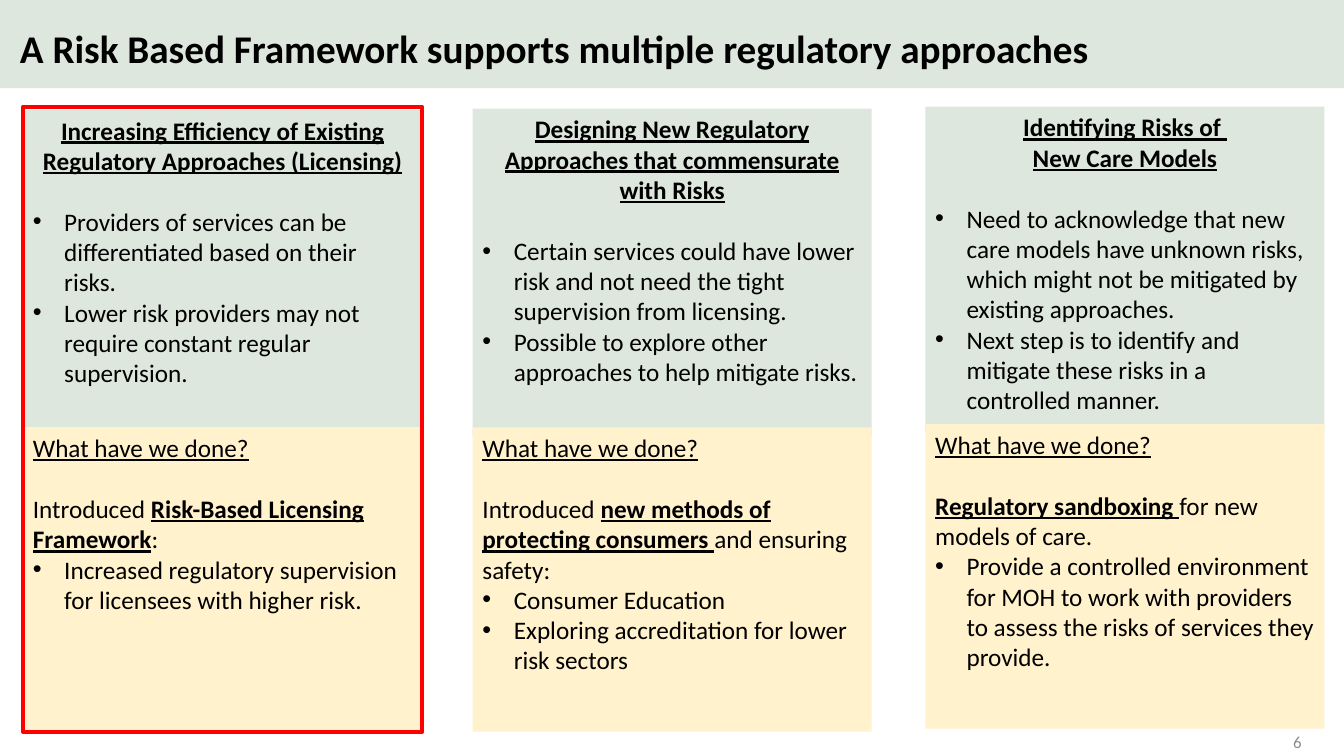
"""Build the slide on regulatory approaches under a risk based framework."""
from dataclasses import dataclass

from lxml import etree
from pptx import Presentation
from pptx import util as u
from pptx.dml.color import RGBColor
from pptx.enum import shapes, text
from pptx.oxml import ns


@dataclass(frozen=True)
class Theme:
    font: str = "Calibri"
    black: RGBColor = RGBColor(0, 0, 0)
    grey: RGBColor = RGBColor(0x8C, 0x8C, 0x8C)
    sage: RGBColor = RGBColor(0xDE, 0xE7, 0xDD)
    cream: RGBColor = RGBColor(0xFF, 0xF2, 0xCC)
    red: RGBColor = RGBColor(0xFF, 0, 0)
    title_size: u.Pt = u.Pt(28)
    body_size: u.Pt = u.Pt(18)
    number_size: u.Pt = u.Pt(12)
    section_gap: u.Pt = u.Pt(22)
    indent: u.Cm = u.Cm(0.79)
    frame_width: u.Pt = u.Pt(3)


@dataclass(frozen=True)
class Box:
    left: float
    top: float
    width: float
    height: float

    def lengths(self) -> tuple:
        return u.Cm(self.left), u.Cm(self.top), u.Cm(self.width), u.Cm(self.height)


@dataclass(frozen=True)
class Span:
    wording: str
    strong: bool = False


@dataclass(frozen=True)
class Approach:
    left: float
    top: float
    height: float
    action_top: float
    heading: tuple
    reasons: tuple
    action: tuple
    details: tuple


THEME = Theme()
COLUMN_WIDTH = 10.06
ACTION_HEIGHT = 7.67
QUESTION = "What have we done?"
TITLE = "A Risk Based Framework supports multiple regulatory approaches"
APPROACHES = (
    Approach(
        0.58, 2.77, 8.0, 10.77,
        ("Increasing Efficiency of Existing Regulatory Approaches (Licensing)",),
        ("Providers of services can be differentiated based on their risks.",
         "Lower risk providers may not require constant regular supervision."),
        (Span("Introduced "), Span("Risk-Based Licensing Framework", True), Span(":")),
        ("Increased regulatory supervision for licensees with higher risk.",),
    ),
    Approach(
        11.91, 2.74, 8.26, 10.77,
        ("Designing New Regulatory Approaches that commensurate with Risks",),
        ("Certain services could have lower risk and not need the tight supervision from licensing.",
         "Possible to explore other approaches to help mitigate risks."),
        (Span("Introduced "), Span("new methods of protecting consumers ", True),
         Span("and ensuring safety:")),
        ("Consumer Education", "Exploring accreditation for lower risk sectors"),
    ),
    Approach(
        23.32, 2.69, 8.2, 10.69,
        ("Identifying Risks of ", "New Care Models"),
        ("Need to acknowledge that new care models have unknown risks, "
         "which might not be mitigated by existing approaches.",
         "Next step is to identify and mitigate these risks in a controlled manner."),
        (Span("Regulatory sandboxing ", True), Span("for new models of care.")),
        ("Provide a controlled environment for MOH to work with providers "
         "to assess the risks of services they provide.",),
    ),
)


def add_panel(slide, box: Box, fill: RGBColor | None):
    """Add a plain rectangle, hollow when no fill is given."""
    panel = slide.shapes.add_shape(shapes.MSO_SHAPE.RECTANGLE, *box.lengths())
    panel.shadow.inherit = False
    panel.line.fill.background()
    if fill is None:
        panel.fill.background()
    else:
        panel.fill.solid()
        panel.fill.fore_color.rgb = fill
    panel.text_frame.word_wrap = True
    panel.text_frame.vertical_anchor = text.MSO_ANCHOR.TOP
    return panel


def style(paragraph, size: u.Pt, color: RGBColor = THEME.black, align=text.PP_ALIGN.LEFT) -> None:
    """Give a paragraph its font, size, colour and alignment."""
    paragraph.alignment = align
    paragraph.font.name = THEME.font
    paragraph.font.size = size
    paragraph.font.color.rgb = color


def next_paragraph(frame):
    """Return the frame's first paragraph while unused, otherwise a new one."""
    first = frame.paragraphs[0]
    return frame.add_paragraph() if first.runs else first


def write_line(frame, wording: str, align=text.PP_ALIGN.LEFT):
    """Write one body paragraph."""
    paragraph = next_paragraph(frame)
    paragraph.text = wording
    style(paragraph, THEME.body_size, align=align)
    return paragraph


def write_bullets(frame, points: tuple) -> None:
    """Write each point as a bulleted paragraph with a hanging indent."""
    for point in points:
        properties = write_line(frame, point)._p.get_or_add_pPr()
        properties.set("marL", str(THEME.indent))
        properties.set("indent", str(-THEME.indent))
        bullet_font = etree.Element(ns.qn("a:buFont"), typeface="Arial")
        bullet = etree.Element(ns.qn("a:buChar"), char="•")
        properties.find(ns.qn("a:defRPr")).addprevious(bullet_font)
        bullet_font.addnext(bullet)


def write_spans(frame, spans: tuple) -> None:
    """Write a paragraph whose strong spans are bold and underlined."""
    paragraph = frame.add_paragraph()
    style(paragraph, THEME.body_size)
    for span in spans:
        run = paragraph.add_run()
        run.text = span.wording
        run.font.bold = run.font.underline = span.strong


def draw_approach(slide, approach: Approach) -> None:
    """Draw one column: the approach above, the action taken below."""
    rationale = add_panel(
        slide, Box(approach.left, approach.top, COLUMN_WIDTH, approach.height), THEME.sage)
    for wording in approach.heading:
        heading = write_line(rationale.text_frame, wording, text.PP_ALIGN.CENTER)
        heading.font.bold = heading.font.underline = True
    heading.space_after = THEME.section_gap
    write_bullets(rationale.text_frame, approach.reasons)

    action = add_panel(
        slide, Box(approach.left, approach.action_top, COLUMN_WIDTH, ACTION_HEIGHT), THEME.cream)
    question = write_line(action.text_frame, QUESTION)
    question.font.underline = True
    question.space_after = THEME.section_gap
    write_spans(action.text_frame, approach.action)
    write_bullets(action.text_frame, approach.details)


def draw_title(slide) -> None:
    """Place the title over its full-width band."""
    title = slide.shapes.title
    band = add_panel(slide, Box(0, 0, 33.87, 2.22), THEME.sage)
    title._element.addprevious(band._element)
    title.left, title.top, title.width, title.height = Box(0.25, 0.36, 33.3, 1.85).lengths()
    title.text_frame.text = TITLE
    title.text_frame.auto_size = text.MSO_AUTO_SIZE.NONE
    title.text_frame.vertical_anchor = text.MSO_ANCHOR.MIDDLE
    headline = title.text_frame.paragraphs[0]
    style(headline, THEME.title_size)
    headline.font.bold = True
    headline.line_spacing = 0.9


def draw_page_number(slide) -> None:
    """Write the page number at the lower right."""
    number = slide.shapes.add_textbox(*Box(25.43, 18.19, 7.62, 1.01).lengths()).text_frame
    number.word_wrap = True
    number.vertical_anchor = text.MSO_ANCHOR.MIDDLE
    number.text = "6"
    style(number.paragraphs[0], THEME.number_size, THEME.grey, text.PP_ALIGN.RIGHT)


def main() -> None:
    """Build and save the presentation."""
    deck = Presentation()
    deck.slide_width, deck.slide_height = u.Cm(33.87), u.Cm(19.05)
    slide = deck.slides.add_slide(deck.slide_layouts.get_by_name("Title Only"))
    draw_title(slide)
    draw_page_number(slide)
    for approach in APPROACHES:
        draw_approach(slide, approach)
    highlight = add_panel(slide, Box(APPROACHES[0].left, 2.69, COLUMN_WIDTH, 15.75), None)
    highlight.line.color.rgb = THEME.red
    highlight.line.width = THEME.frame_width
    deck.save("out.pptx")


if __name__ == "__main__":
    main()
